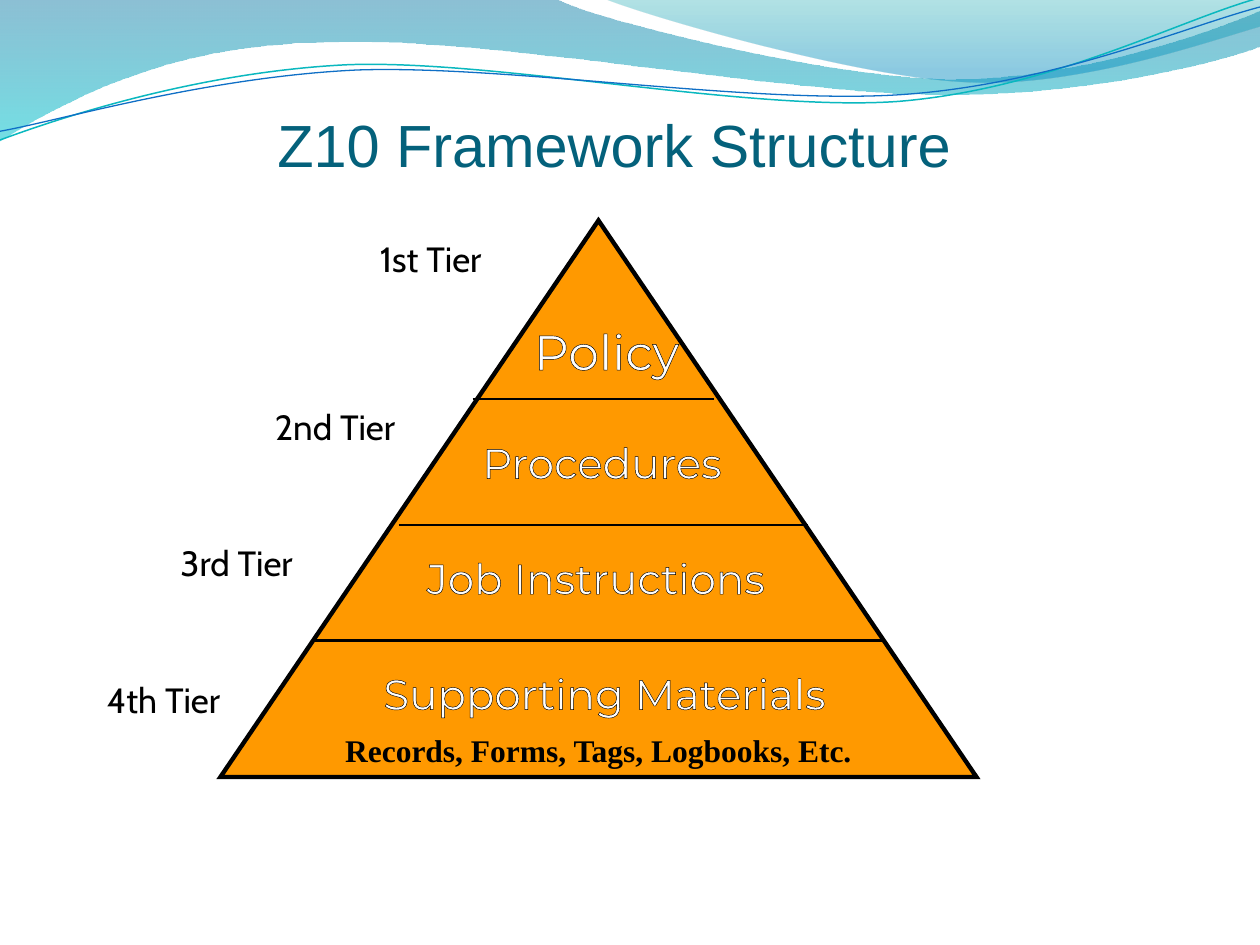
from lxml import etree
from pptx import Presentation
from pptx.dml.color import RGBColor
from pptx.enum.shapes import MSO_CONNECTOR, MSO_SHAPE
from pptx.enum.text import MSO_ANCHOR, PP_ALIGN
from pptx.oxml import parse_xml
from pptx.oxml.ns import nsdecls, qn
from pptx.util import Pt

THEME = {
    "title": {"name": "Arial", "size": 34, "color": "04617B", "bold": False},
    "tier": {"name": "Cabin", "size": 20, "color": "000000"},
    "policy": {"name": "Montserrat", "size": 28, "color": "FFFFFF"},
    "level": {"name": "Montserrat", "size": 24, "color": "FFFFFF"},
    "examples": {"name": "Times New Roman", "size": 18, "color": "000000", "bold": True},
    "pyramid": "FF9900",
    "ink": "000000",
    "outline_pt": 0.75,
}

TITLE = ("Z10 Framework Structure", (48, 36, 606, 92))
PYRAMID = (126, 126, 432, 318)
TIERS = [
    ("1st Tier", 210, 132),
    ("2nd Tier", 150, 228),
    ("3rd Tier", 96, 306),
    ("4th Tier", 54, 384),
]
LEVELS = [
    ("Policy", "policy", 300, 93),
    ("Procedures", "level", 270, 148),
    ("Job Instructions", "level", 234, 213),
    ("Supporting Materials", "level", 210, 271),
]
LEVEL_TOP, LEVEL_STEP = 180, 66
DIVIDERS = [(270, 408, 228), (228, 462, 300), (180, 504, 366)]
EXAMPLES = ("Records, Forms, Tags, Logbooks, Etc.", (174, 414, 336, 29))

BANDS = [
    {
        "start": (0, -0.7),
        "segments": [
            [(316.8, -0.7)],
            [(342.7, 12.2), (478, 45.4), (545.8, 45.4)],
            [(614.2, 45.4), (689.8, 18.7), (720, 6.5)],
            [(720.7, 25.9)],
            [(707.8, 31.7), (626.4, 54.7), (537.1, 54)],
            [(447.8, 54), (275, 20.2), (185, 24.5)],
            [(92.9, 25.2), (33.1, 59.8), (-0.7, 81.4)],
        ],
        "stops": [(0, "0074A1", 45), (100, "00C6CF", 55)],
    },
    {
        "start": (344.9, -0.7),
        "segments": [
            [(366.5, 7.9), (491, 44.6), (553.7, 46.8)],
            [(616.3, 49.7), (691.9, 23), (720, 15.1)],
            [(720, 0)],
        ],
        "stops": [(0, "00A1A9", 30), (80, "008BBF", 45)],
    },
]
STRANDS = [
    {
        "start": (0, 79.9),
        "segments": [
            [(34.6, 67), (113.8, 41), (199.4, 37.4)],
            [(284.4, 33.8), (427, 64.1), (513.4, 57.6)],
            [(599.8, 51.1), (675.4, 10.8), (718.6, -1.4)],
        ],
        "line": ("0AB8BF", 0.85),
    },
    {
        "start": (0, 74.9),
        "segments": [
            [(33.8, 69.1), (118.1, 43.9), (203.8, 40.3)],
            [(290.2, 36.7), (429.8, 59.8), (516.2, 54)],
            [(601.9, 48.2), (677.5, 15.1), (720, 4.3)],
        ],
        "line": ("0F6FC6", 0.75),
    },
]


def set_line(line, color, width):
    line.color.rgb = RGBColor.from_string(color)
    line.width = Pt(width)


def format_font(font, style):
    values = dict(style)
    font.color.rgb = RGBColor.from_string(values.pop("color"))
    values["size"] = Pt(values["size"])
    for name, value in values.items():
        setattr(font, name, value)


def add_curve(shapes, start, segments, closed):
    builder = shapes.build_freeform(*start, scale=float(Pt(1)))
    for segment in segments:
        builder.add_line_segments(segment, close=False)
    if closed:
        builder.add_line_segments([], close=True)
    curve = builder.convert_to_shape()
    curve.shadow.inherit = False
    steps = iter(list(curve.element.iter(qn("a:lnTo"))))
    for segment in segments:
        first, *others = [next(steps) for _ in segment]
        if others:
            bezier = etree.Element(qn("a:cubicBezTo"))
            first.addprevious(bezier)
            for step in (first, *others):
                bezier.append(step[0])
                step.getparent().remove(step)
    return curve


def add_band(shapes, band):
    curve = add_curve(shapes, band["start"], band["segments"], True)
    curve.line.fill.background()
    stops = "".join(
        f'<a:gs pos="{position * 1000}"><a:srgbClr val="{color}">'
        f'<a:alpha val="{opacity * 1000}"/></a:srgbClr></a:gs>'
        for position, color, opacity in band["stops"]
    )
    gradient = parse_xml(
        f'<a:gradFill {nsdecls("a")} rotWithShape="1"><a:gsLst>{stops}</a:gsLst>'
        '<a:lin ang="5400000" scaled="0"/></a:gradFill>'
    )
    curve.element.spPr.find(qn("a:custGeom")).addnext(gradient)


def add_strand(shapes, strand):
    curve = add_curve(shapes, strand["start"], strand["segments"], False)
    curve.fill.background()
    set_line(curve.line, *strand["line"])


def add_text(shapes, wording, box, style, align=PP_ALIGN.LEFT, wrap=True):
    label = shapes.add_textbox(*map(Pt, box))
    label.text_frame.word_wrap = wrap
    paragraph = label.text_frame.paragraphs[0]
    paragraph.alignment = align
    run = paragraph.add_run()
    run.text = wording
    format_font(run.font, THEME[style])
    return label


def add_outlined_text(shapes, wording, box, style):
    label = add_text(shapes, wording, box, style, PP_ALIGN.CENTER, wrap=False)
    label.text_frame.margin_left = label.text_frame.margin_right = 0
    outline = parse_xml(
        f'<a:ln {nsdecls("a")} w="{Pt(THEME["outline_pt"])}"><a:solidFill>'
        f'<a:srgbClr val="{THEME["ink"]}"/></a:solidFill></a:ln>'
    )
    next(label.element.iter(qn("a:rPr"))).insert(0, outline)


def add_title(slide):
    wording, box = TITLE
    title = slide.shapes.title
    title.left, title.top, title.width, title.height = map(Pt, box)
    title.text_frame.vertical_anchor = MSO_ANCHOR.MIDDLE
    paragraph = title.text_frame.paragraphs[0]
    paragraph.alignment = PP_ALIGN.CENTER
    run = paragraph.add_run()
    run.text = wording
    format_font(run.font, THEME["title"])


def add_pyramid(shapes):
    pyramid = shapes.add_shape(MSO_SHAPE.ISOSCELES_TRIANGLE, *map(Pt, PYRAMID))
    pyramid.shadow.inherit = False
    pyramid.fill.solid()
    pyramid.fill.fore_color.rgb = RGBColor.from_string(THEME["pyramid"])
    set_line(pyramid.line, THEME["ink"], 2.5)
    edge = pyramid.element.spPr.find(qn("a:ln"))
    etree.SubElement(edge, qn("a:miter"), lim="800000")
    for left, right, y in DIVIDERS:
        divider = shapes.add_connector(MSO_CONNECTOR.STRAIGHT, *map(Pt, (left, y, right, y)))
        set_line(divider.line, THEME["ink"], 1.5)
        etree.SubElement(divider.element.spPr, qn("a:effectLst"))


def main():
    deck = Presentation()
    deck.slide_width, deck.slide_height = Pt(720), Pt(540)
    slide = deck.slides.add_slide(deck.slide_layouts[5])
    shapes = slide.shapes
    for band in BANDS:
        add_band(shapes, band)
    for strand in STRANDS:
        add_strand(shapes, strand)
    add_title(slide)
    add_pyramid(shapes)
    for wording, left, top in TIERS:
        add_text(shapes, wording, (left, top, 114, 31), "tier")
    add_text(shapes, *EXAMPLES, "examples", PP_ALIGN.CENTER)
    for row, (wording, style, left, width) in enumerate(LEVELS):
        box = (left, LEVEL_TOP + row * LEVEL_STEP, width, THEME[style]["size"] * 1.4)
        add_outlined_text(shapes, wording, box, style)
    deck.save("out.pptx")


if __name__ == "__main__":
    main()
